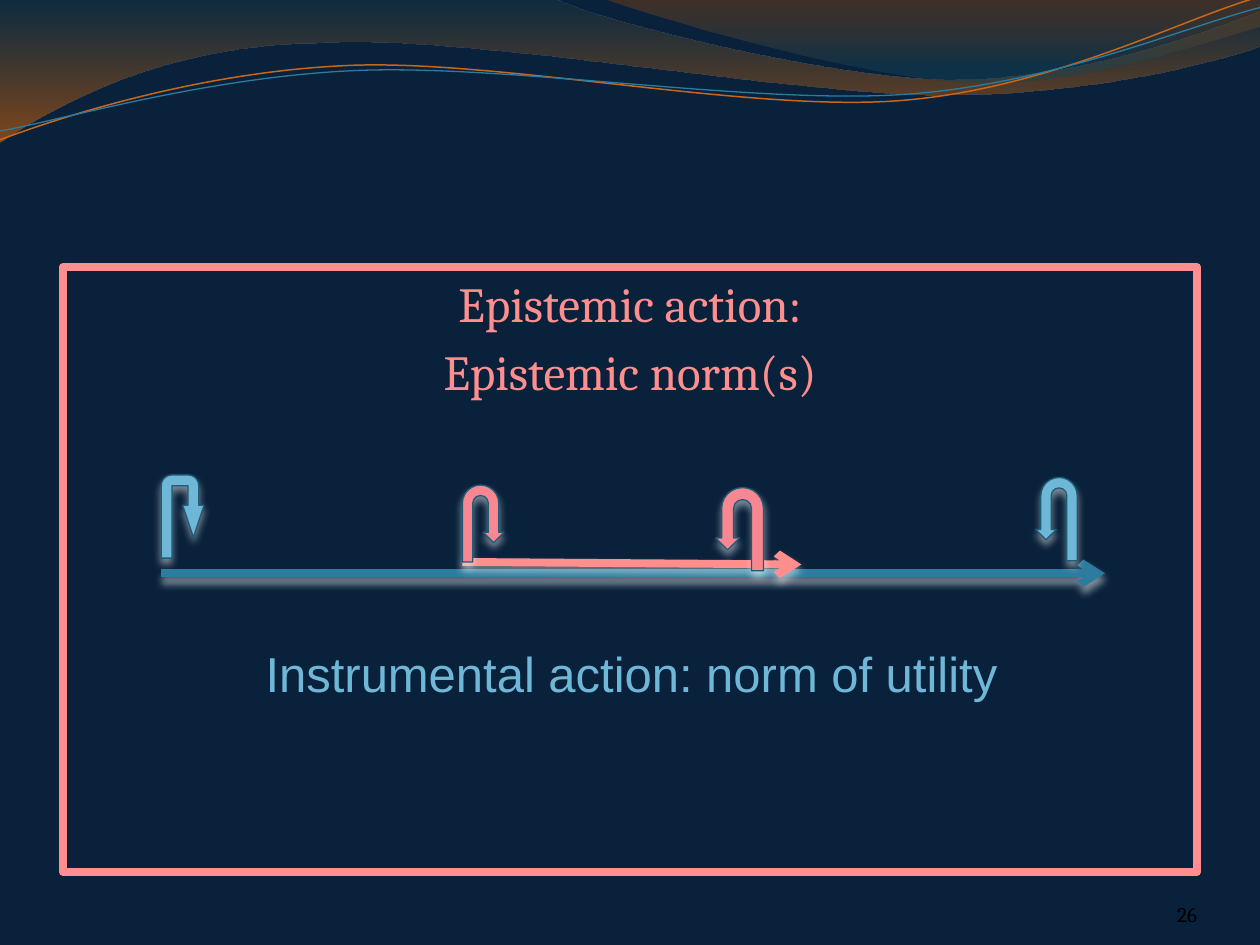
from lxml import etree
from pptx import Presentation
from pptx.dml.color import RGBColor
from pptx.enum.shapes import MSO_CONNECTOR, MSO_SHAPE
from pptx.enum.text import MSO_ANCHOR, PP_ALIGN
from pptx.oxml.ns import qn
from pptx.util import Inches, Pt

STRAIGHT = MSO_CONNECTOR.STRAIGHT
RECTANGLE = MSO_SHAPE.RECTANGLE
UTURN = MSO_SHAPE.U_TURN_ARROW
TOP = MSO_ANCHOR.TOP
LEFT, CENTER, RIGHT = PP_ALIGN.LEFT, PP_ALIGN.CENTER, PP_ALIGN.RIGHT

NAVY = RGBColor(0x09, 0x21, 0x3B)
PINK = RGBColor(0xFF, 0x8F, 0x8F)
ROSE = RGBColor(0xF8, 0x87, 0x92)
SKY = RGBColor(0x6F, 0xB7, 0xD7)
TEAL = RGBColor(0x2C, 0x7C, 0x9F)
DEEP_TEAL = RGBColor(0x1F, 0x5C, 0x77)
RUST = RGBColor(0xC7, 0x67, 0x1A)
ORANGE = RGBColor(0xE7, 0x67, 0x00)
BROWN = RGBColor(0xBD, 0x54, 0x00)
SLATE = RGBColor(0x17, 0x39, 0x45)
STEEL = RGBColor(0x17, 0x46, 0x57)
GLOW = RGBColor(0xFF, 0xFF, 0xFF)
BLACK = RGBColor(0, 0, 0)


def add_outline(page, start, pieces, close):
    corners = [tuple(map(Inches, piece[-1])) for piece in pieces]
    builder = page.shapes.build_freeform(*map(Inches, start), scale=1)
    builder.add_line_segments(corners, close=close)
    outline = builder.convert_to_shape()
    outline.shadow.inherit = False
    segments = list(outline._element.iter(qn("a:lnTo")))
    for segment, piece in zip(segments, pieces):
        if len(piece) == 1:
            continue
        curve = etree.Element(qn("a:cubicBezTo"))
        for x, y in piece:
            etree.SubElement(curve, qn("a:pt"), x=str(Inches(x) - outline.left),
                             y=str(Inches(y) - outline.top))
        segment.getparent().replace(segment, curve)
    return outline


def add_band(page, start, pieces, stops):
    band = add_outline(page, start, pieces, True)
    band.line.fill.background()
    band.fill.gradient()
    band.fill.gradient_angle = 270
    for stop, (position, color, _) in zip(band.fill.gradient_stops, stops):
        stop.position = position
        stop.color.rgb = color
    for node, (_, _, opacity) in zip(band._element.spPr.iter(qn("a:srgbClr")), stops):
        etree.SubElement(node, qn("a:alpha"), val=str(opacity * 1000))


def add_wave(page, start, pieces, color, width):
    wave = add_outline(page, start, pieces, False)
    wave.fill.background()
    wave.line.color.rgb = color
    wave.line.width = Pt(width)


def add_header(page):
    add_band(page, (0, -0.01), [
        [(4.4, -0.01)],
        [(4.76, 0.17), (6.64, 0.63), (7.58, 0.63)],
        [(8.53, 0.63), (9.58, 0.26), (10, 0.09)],
        [(10.01, 0.36)],
        [(9.83, 0.44), (8.7, 0.76), (7.46, 0.75)],
        [(6.22, 0.75), (3.82, 0.28), (2.57, 0.34)],
        [(1.29, 0.35), (0.46, 0.83), (-0.01, 1.13)],
    ], [(0, SLATE, 45), (1, ORANGE, 55)])
    add_band(page, (4.79, -0.01), [
        [(5.09, 0.11), (6.82, 0.62), (7.69, 0.65)],
        [(8.56, 0.69), (9.61, 0.32), (10, 0.21)],
        [(10, 0)],
    ], [(0, BROWN, 30), (0.8, STEEL, 45)])
    add_wave(page, (0, 1.11), [
        [(0.48, 0.93), (1.58, 0.57), (2.77, 0.52)],
        [(3.95, 0.47), (5.93, 0.89), (7.13, 0.8)],
        [(8.33, 0.71), (9.38, 0.15), (9.98, -0.02)],
    ], RUST, 0.85)
    add_wave(page, (0, 1.04), [
        [(0.47, 0.96), (1.64, 0.61), (2.83, 0.56)],
        [(4.03, 0.51), (5.97, 0.83), (7.17, 0.75)],
        [(8.36, 0.67), (9.41, 0.21), (10, 0.06)],
    ], TEAL, 0.75)


def add_glow(item):
    properties = item._element.spPr
    effects = properties.find(qn("a:effectLst"))
    if effects is None:
        effects = etree.SubElement(properties, qn("a:effectLst"))
    shadow = etree.SubElement(
        effects, qn("a:outerShdw"), blurRad=str(Pt(4.5)), dist=str(Pt(3)),
        dir="5400000", rotWithShape="0")
    color = etree.SubElement(shadow, qn("a:srgbClr"), val=str(GLOW))
    etree.SubElement(color, qn("a:alpha"), val="48000")


def write(frame, lines, font, size, color, align, space=0):
    frame.word_wrap = True
    frame.vertical_anchor = TOP
    for index, line in enumerate(lines):
        para = frame.add_paragraph() if index else frame.paragraphs[0]
        para.text = line
        para.alignment = align
        para.space_before = Pt(space)
        para.font.name = font
        para.font.size = Pt(size)
        para.font.color.rgb = color


def add_text(page, box, line, font, size, color, align):
    frame = page.shapes.add_textbox(*map(Inches, box)).text_frame
    write(frame, [line], font, size, color, align)
    return frame


def add_panel(page, box):
    panel = page.shapes.add_shape(RECTANGLE, *map(Inches, box))
    panel.shadow.inherit = False
    panel.fill.background()
    panel.line.color.rgb = PINK
    panel.line.width = Pt(4.5)
    write(panel.text_frame, ["Epistemic action:", "Epistemic norm(s)"],
          "Cambria", 28, PINK, CENTER, 5.6)


def add_timeline(page, start, end, color):
    timeline = page.shapes.add_connector(STRAIGHT, *map(Inches, start + end))
    timeline.line.color.rgb = color
    timeline.line.width = Pt(4.5)
    etree.SubElement(timeline.line._get_or_add_ln(), qn("a:tailEnd"), type="arrow")
    add_glow(timeline)


def add_turn(page, box, color, flipped=False, adjustments=()):
    turn = page.shapes.add_shape(UTURN, *map(Inches, box))
    turn.fill.solid()
    turn.fill.fore_color.rgb = color
    turn.line.color.rgb = DEEP_TEAL
    turn.line.width = Pt(0.75)
    turn.shadow.inherit = False
    add_glow(turn)
    if flipped:
        turn._element.spPr.xfrm.set("flipH", "1")
    for index, value in enumerate(adjustments):
        turn.adjustments[index] = value


def add_diagram(page):
    add_timeline(page, (1.28, 4.55), (8.77, 4.55), TEAL)
    add_timeline(page, (3.67, 4.46), (6.36, 4.48), PINK)
    add_text(page, (2.01, 5.06, 6.55, 0.57),
             "Instrumental action: norm of utility", "Arial", 28, SKY, LEFT)
    add_turn(page, (3.67, 3.85, 0.33, 0.61), ROSE)
    add_turn(page, (5.68, 3.87, 0.38, 0.66), ROSE, True)
    add_turn(page, (8.22, 3.79, 0.33, 0.66), SKY, True)
    add_turn(page, (1.28, 3.77, 0.34, 0.66), SKY,
             adjustments=(0.25, 0.25, 0.75, 0.25, 0.75))


def add_page_number(page, box):
    frame = add_text(page, box, "26", "Cambria", 12, BLACK, RIGHT)
    frame.margin_left = frame.margin_right = 0


def main():
    deck = Presentation()
    deck.slide_width, deck.slide_height = Inches(10), Inches(7.5)
    page = deck.slides.add_slide(deck.slide_layouts[6])
    page.background.fill.solid()
    page.background.fill.fore_color.rgb = NAVY
    add_header(page)
    add_panel(page, (0.5, 2.12, 9, 4.8))
    add_diagram(page)
    add_page_number(page, (8.9, 7.11, 0.6, 0.3))
    deck.save("out.pptx")


if __name__ == "__main__":
    main()
